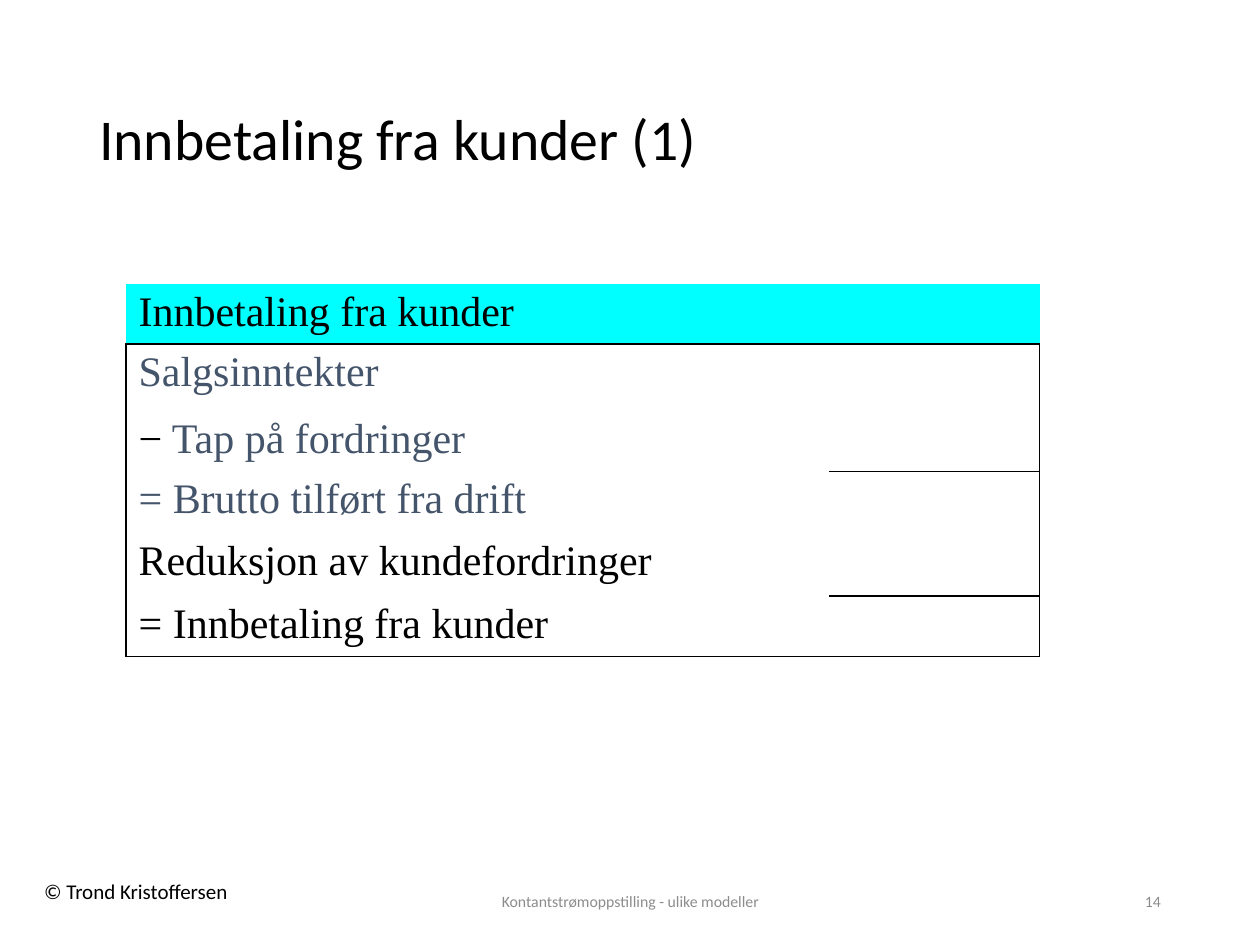
"""Builds the slide on cash received from customers."""
from dataclasses import dataclass

from lxml.etree import SubElement
from pptx import Presentation
from pptx.dml.color import RGBColor
from pptx.enum.text import MSO_ANCHOR as Anchor, PP_ALIGN as Align
from pptx.oxml.ns import qn
from pptx.util import Cm, Pt

BLACK = RGBColor(0x00, 0x00, 0x00)
SLATE = RGBColor(0x44, 0x54, 0x6A)
GREY = RGBColor(0x8C, 0x8C, 0x8C)
CYAN = RGBColor(0x00, 0xFF, 0xFF)
SANS, SERIF = "Calibri", "Times New Roman"
COL_WIDTHS = (13.54, 0.64, 4.24)


@dataclass(frozen=True)
class Label:
    text: str
    box: tuple[float, float, float, float]
    size: float
    color: RGBColor = BLACK
    align: Align = Align.LEFT
    anchor: Anchor = Anchor.MIDDLE
    wrap: bool = True
    spacing: float = 1.0


@dataclass(frozen=True)
class Row:
    height: float
    runs: tuple[tuple[str, RGBColor], ...]
    sum_line: bool = False


LABELS = (
    Label("© Trond Kristoffersen", (0.64, 17.58, 4.32, 0.76), 12,
          anchor=Anchor.TOP, wrap=False),
    Label("Innbetaling fra kunder (1)", (1.75, 1.02, 21.89, 3.68), 33, spacing=0.9),
    Label("Kontantstrømoppstilling - ulike modeller", (8.41, 17.65, 8.59, 1.02), 9,
          GREY, Align.CENTER),
    Label("14", (17.93, 17.65, 5.72, 1.02), 9, GREY, Align.RIGHT),
)
ROWS = (
    Row(1.18, (("Innbetaling fra kunder", BLACK),)),
    Row(1.35, (("Salgsinntekter", SLATE),)),
    Row(1.19, (("−", BLACK), (" Tap på fordringer", SLATE)), True),
    Row(1.24, (("= Brutto tilført fra drift", SLATE),)),
    Row(1.27, (("Reduksjon av kundefordringer", BLACK),), True),
    Row(1.19, (("= Innbetaling fra kunder", BLACK),)),
)


def add_run(p, text: str, font: str, size: float, color: RGBColor) -> None:
    """Append one formatted run to a paragraph."""
    r = p.add_run()
    r.text = text
    for name, value in {"name": font, "size": Pt(size), "bold": False}.items():
        setattr(r.font, name, value)
    r.font.color.rgb = color


def add_label(s, label: Label) -> None:
    """Draw a text box."""
    tf = s.shapes.add_textbox(*map(Cm, label.box)).text_frame
    for name, value in {"word_wrap": label.wrap, "vertical_anchor": label.anchor}.items():
        setattr(tf, name, value)
    p = tf.paragraphs[0]
    p.alignment, p.line_spacing = label.align, label.spacing
    add_run(p, label.text, SANS, label.size, label.color)


def set_borders(cell, sides: dict[str, bool]) -> None:
    """Give the cell a black line on the chosen sides and none on the others."""
    tc_pr = cell._tc.get_or_add_tcPr()
    for side, shown in sides.items():
        ln = SubElement(tc_pr, qn(f"a:ln{side}"), w=str(Pt(1)))
        if shown:
            fill = SubElement(ln, qn("a:solidFill"))
            SubElement(fill, qn("a:srgbClr"), val=str(BLACK))
        else:
            SubElement(ln, qn("a:noFill"))


def has_line_below(i: int, j: int) -> bool:
    """Tell whether a line runs under the cell in row i, column j."""
    return i in (0, len(ROWS) - 1) or (ROWS[i].sum_line and j == 2)


def add_statement(s) -> None:
    """Draw the statement table."""
    size = Cm(sum(COL_WIDTHS)), Cm(sum(row.height for row in ROWS))
    table = s.shapes.add_table(len(ROWS), len(COL_WIDTHS), Cm(2.54), Cm(5.72), *size).table
    for name in ("first_row", "horz_banding"):
        setattr(table, name, False)
    for column, width in zip(table.columns, COL_WIDTHS):
        column.width = Cm(width)
    for i, row in enumerate(ROWS):
        table.rows[i].height = Cm(row.height)
        for j in range(len(COL_WIDTHS)):
            cell = table.cell(i, j)
            cell.margin_top = cell.margin_bottom = Cm(0.1)
            set_borders(cell, {
                "L": i > 0 and j == 0,
                "R": i > 0 and j == 2,
                "T": i > 0 and has_line_below(i - 1, j),
                "B": has_line_below(i, j),
            })
            if i == 0:
                cell.fill.solid()
                cell.fill.fore_color.rgb = CYAN
            else:
                cell.fill.background()
        for text, color in row.runs:
            add_run(table.cell(i, 0).text_frame.paragraphs[0], text, SERIF, 24, color)
    table.cell(0, 0).merge(table.cell(0, 2))


def main() -> None:
    """Build and save the slide."""
    prs = Presentation()
    prs.slide_width, prs.slide_height = Cm(25.4), Cm(19.05)
    s = prs.slides.add_slide(prs.slide_layouts[6])
    for label in LABELS:
        add_label(s, label)
    add_statement(s)
    prs.save("out.pptx")


if __name__ == "__main__":
    main()
